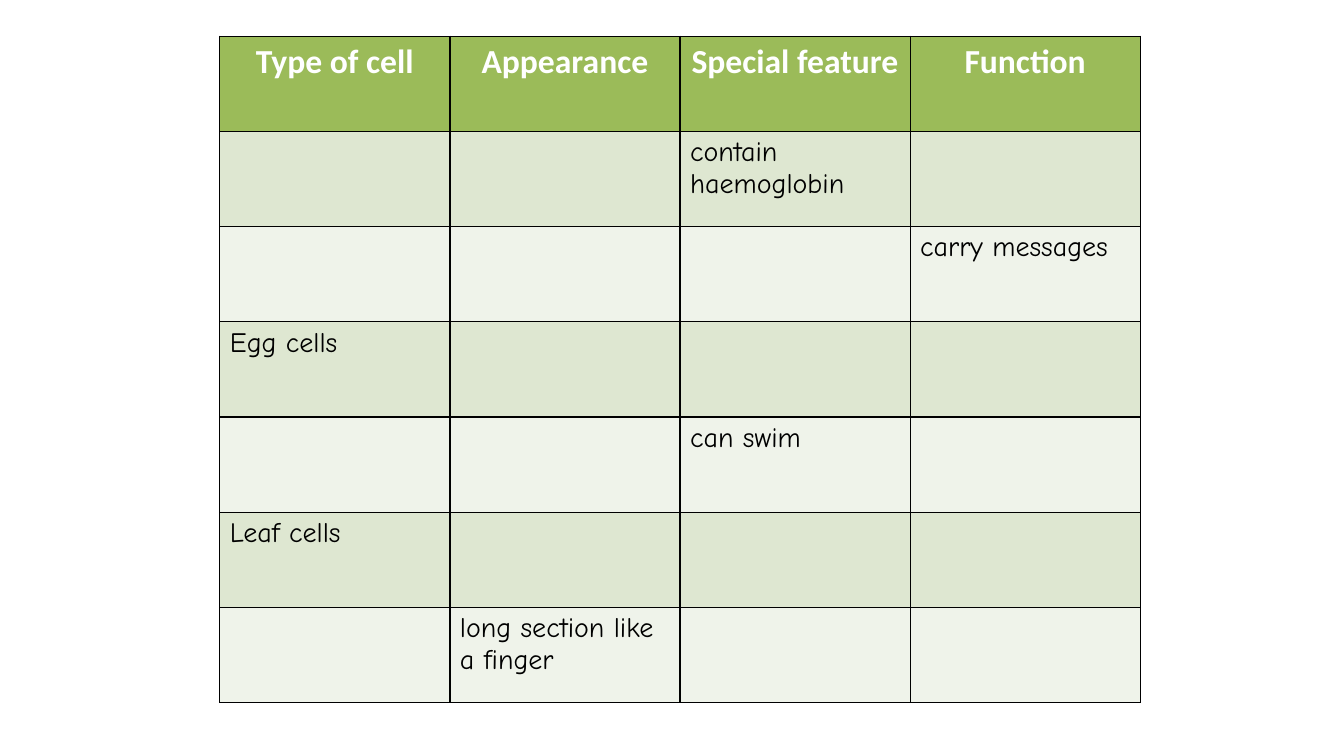
"""Builds a slide with a worksheet table on specialised cells."""
import lxml.etree
import pptx
import pptx.dml.color
import pptx.enum.text
import pptx.oxml.ns
import pptx.util

RGBColor = pptx.dml.color.RGBColor
Inches = pptx.util.Inches
WHITE = RGBColor(0xFF, 0xFF, 0xFF)
BLACK = RGBColor(0x00, 0x00, 0x00)
HEADER_GREEN = RGBColor(0x9B, 0xBB, 0x59)
BAND_GREENS = (RGBColor(0xEF, 0xF3, 0xEA), RGBColor(0xDE, 0xE7, 0xD1))

HEADINGS = ("Type of cell", "Appearance", "Special feature", "Function")
CLUES = (
    ("", "", "contain haemoglobin", ""),
    ("", "", "", "carry messages"),
    ("Egg cells", "", "", ""),
    ("", "", "can swim", ""),
    ("Leaf cells", "", "", ""),
    ("", "long section like a finger", "", ""),
)


class Worksheet:
    def __init__(self, presentation):
        self.slide = presentation.slides.add_slide(presentation.slide_layouts[6])
        self.border_width = pptx.util.Pt(1)

    def add_borders(self, cell):
        qn = pptx.oxml.ns.qn
        properties = cell._tc.get_or_add_tcPr()
        for position, side in enumerate(("lnL", "lnR", "lnT", "lnB")):
            border = lxml.etree.Element(qn(f"a:{side}"), w=str(self.border_width))
            fill = lxml.etree.SubElement(border, qn("a:solidFill"))
            lxml.etree.SubElement(fill, qn("a:srgbClr"), val=str(BLACK))
            properties.insert(position, border)

    def fill_cell(self, cell, text, is_heading, background):
        cell.fill.solid()
        cell.fill.fore_color.rgb = background
        self.add_borders(cell)
        if not text:
            return
        cell.text_frame.text = text
        paragraph = cell.text_frame.paragraphs[0]
        if is_heading:
            paragraph.alignment = pptx.enum.text.PP_ALIGN.CENTER
        font = paragraph.runs[0].font
        font.name = "Calibri" if is_heading else "Comic Neue"
        font.size = pptx.util.Pt(24 if is_heading else 20)
        font.bold = is_heading
        font.color.rgb = WHITE if is_heading else BLACK

    def add_table(self, rows, left, top, width, height):
        table = self.slide.shapes.add_table(
            len(rows), len(rows[0]), left, top, width, height
        ).table
        for row, texts in enumerate(rows):
            background = BAND_GREENS[row % 2] if row else HEADER_GREEN
            for column, text in enumerate(texts):
                self.fill_cell(table.cell(row, column), text, row == 0, background)


def main():
    presentation = pptx.Presentation()
    presentation.slide_width = Inches(13.33)
    presentation.slide_height = Inches(7.5)
    worksheet = Worksheet(presentation)
    worksheet.add_table(
        (HEADINGS, *CLUES), Inches(2.18), Inches(0.36), Inches(9.13), Inches(6.61)
    )
    presentation.save("out.pptx")


if __name__ == "__main__":
    main()
